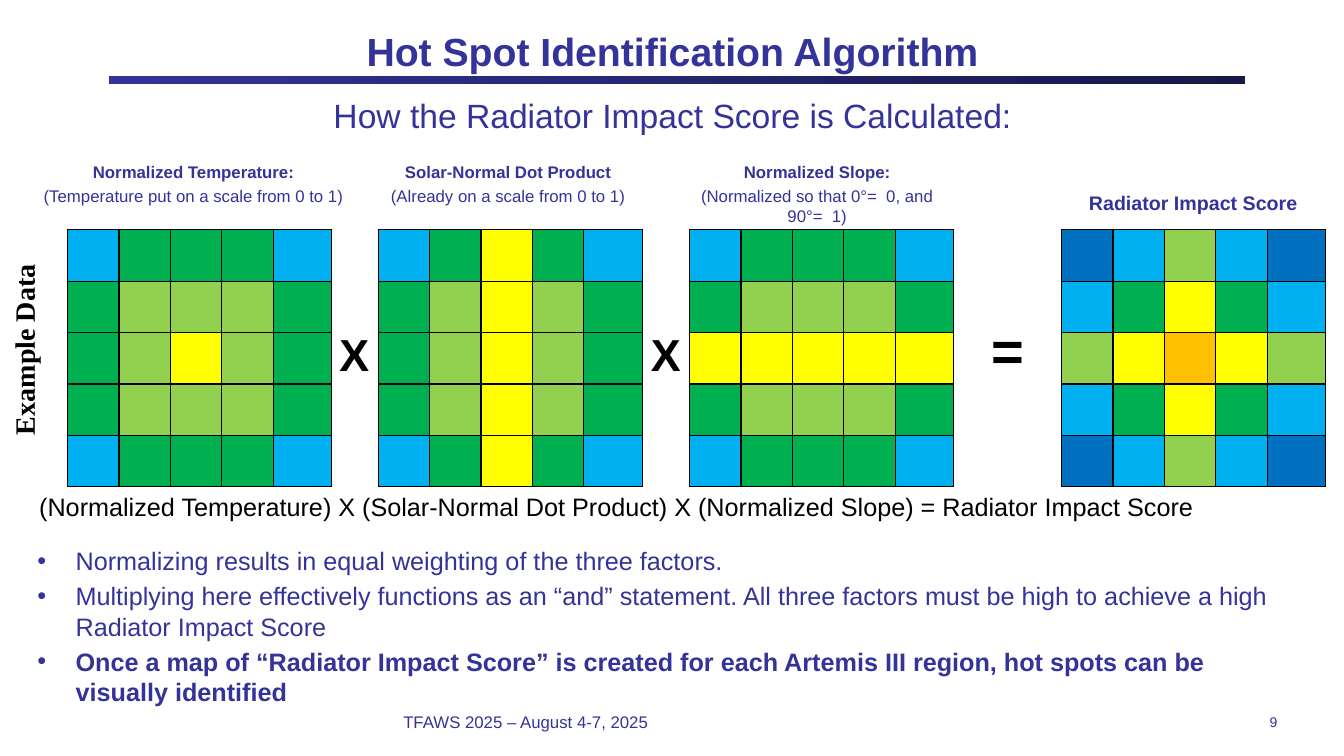
"""Builds the slide that explains how the Radiator Impact Score is calculated."""
from dataclasses import dataclass

from lxml import etree
from pptx import Presentation
from pptx.dml.color import RGBColor
from pptx.enum.shapes import MSO_SHAPE
from pptx.enum.text import MSO_ANCHOR, MSO_AUTO_SIZE, PP_ALIGN
from pptx.oxml.ns import qn
from pptx.util import Emu, Pt

LEFT, CENTER, RIGHT = PP_ALIGN.LEFT, PP_ALIGN.CENTER, PP_ALIGN.RIGHT
TOP, MIDDLE = MSO_ANCHOR.TOP, MSO_ANCHOR.MIDDLE
NO_AUTOFIT = MSO_AUTO_SIZE.NONE
RECTANGLE = MSO_SHAPE.RECTANGLE
EMU_PER_PX = 9144
TWO_CONTENT = 3


@dataclass(frozen=True)
class Theme:
    """Colours, fonts and type sizes of the slide."""
    ink: str = "333399"
    ink_dark: str = "181848"
    black: str = "000000"
    white: str = "FFFFFF"
    sans: str = "Arial"
    serif: str = "Times New Roman"
    title: int = 28
    subtitle: int = 24
    body: int = 18
    score: int = 14
    caption: int = 12
    number: int = 10
    times: int = 32
    equals: int = 40
    side: int = 20


THEME = Theme()
HEAT = {"D": "0070C0", "B": "00B0F0", "G": "00B050",
        "L": "92D050", "Y": "FFFF00", "O": "FFC000"}


def px(length):
    """Turn a length in px into EMU."""
    return Emu(length * EMU_PER_PX)


def write(frame, *texts, size, color=THEME.ink, font=THEME.sans, bold=(False,),
          align=LEFT, anchor=TOP, inset=(10, 5), wrap=True, bullet=None):
    """Write one paragraph per text; bold lists the weight of each paragraph."""
    frame.auto_size = NO_AUTOFIT
    frame.word_wrap = wrap
    frame.vertical_anchor = anchor
    frame.margin_left = frame.margin_right = px(inset[0])
    frame.margin_top = frame.margin_bottom = px(inset[1])
    for index, text in enumerate(texts):
        para = frame.add_paragraph() if index else frame.paragraphs[0]
        properties = para._p.get_or_add_pPr()
        indent = px(38) if bullet else 0
        properties.set("marL", str(indent))
        properties.set("indent", str(-indent))
        if bullet:
            etree.SubElement(properties, qn("a:buChar"), char=bullet)
        else:
            etree.SubElement(properties, qn("a:buNone"))
        para.alignment = align
        para.space_before = Pt(size * 0.2 if index else 0)
        span = para.add_run()
        span.text = text
        span.font.name = font
        span.font.size = Pt(size)
        span.font.bold = bold[index % len(bold)]
        span.font.color.rgb = RGBColor.from_string(color)


class Slide:
    """Holds the theme and the current page and adds elements to it."""

    def __init__(self, page, theme):
        self.page = page
        self.theme = theme

    def placeholder(self, index, area, *texts, **style):
        """Move a template placeholder and fill it."""
        box = self.page.placeholders[index]
        box.left, box.top, box.width, box.height = map(px, area)
        write(box.text_frame, *texts, **style)

    def text(self, area, *texts, vertical=None, **style):
        """Add a text box."""
        box = self.page.shapes.add_textbox(*map(px, area))
        write(box.text_frame, *texts, **style)
        if vertical:
            box.text_frame._txBody.bodyPr.set("vert", vertical)

    def bar(self, area, start, end=None):
        """Add a rectangle with a plain fill or a gradient from left to right."""
        bar = self.page.shapes.add_shape(RECTANGLE, *map(px, area))
        bar.shadow.inherit = False
        bar.line.fill.background()
        if end is None:
            bar.fill.solid()
            bar.fill.fore_color.rgb = RGBColor.from_string(start)
            return
        bar.fill.gradient()
        bar.fill.gradient_angle = 0
        for stop, color in zip(bar.fill.gradient_stops, (start, end)):
            stop.color.rgb = RGBColor.from_string(color)

    def border(self, cell):
        """Draw a thin black line on each side of a cell."""
        properties = cell._tc.get_or_add_tcPr()
        for side in ("a:lnL", "a:lnR", "a:lnT", "a:lnB"):
            line = etree.SubElement(properties, qn(side), w=str(Pt(1)))
            fill = etree.SubElement(line, qn("a:solidFill"))
            etree.SubElement(fill, qn("a:srgbClr"), val=self.theme.black)

    def heat_map(self, left, pattern):
        """Add a table whose cells take their colours from rows of letters."""
        rows = pattern.split()
        frame = self.page.shapes.add_table(
            len(rows), len(rows[0]), px(left), px(228), px(262), px(255))
        table = frame.table
        table.first_row = table.horz_banding = False
        for column, width in zip(table.columns, (51, 51, 51, 51, 58)):
            column.width = px(width)
        for row_index, row in enumerate(rows):
            table.rows[row_index].height = px(51)
            for column_index, letter in enumerate(row):
                cell = table.cell(row_index, column_index)
                self.border(cell)
                cell.fill.solid()
                cell.fill.fore_color.rgb = RGBColor.from_string(HEAT[letter])


def main():
    """Build the deck and save it."""
    deck = Presentation()
    deck.slide_width, deck.slide_height = px(1333), px(750)
    page = deck.slides.add_slide(deck.slide_layouts[TWO_CONTENT])
    slide = Slide(page, THEME)

    slide.bar((98, 75, 1137, 8), THEME.ink, THEME.ink_dark)
    slide.placeholder(0, (67, 21, 1200, 58), "Hot Spot Identification Algorithm",
                      size=THEME.title, bold=(True,), align=CENTER,
                      anchor=MIDDLE, inset=(10, 0))
    slide.placeholder(1, (67, 89, 1200, 58),
                      "How the Radiator Impact Score is Calculated:",
                      size=THEME.subtitle, align=CENTER)

    captions = (
        ((0, 156, 384, 105), "Normalized Temperature:",
         "(Temperature put on a scale from 0 to 1)"),
        ((312, 156, 384, 105), "Solar-Normal Dot Product",
         "(Already on a scale from 0 to 1)"),
        ((675, 156, 271, 92), "Normalized Slope:",
         "(Normalized so that 0°=  0, and 90°=  1)"),
    )
    for area, heading, detail in captions:
        slide.text(area, heading, detail, size=THEME.caption,
                   bold=(True, False), align=CENTER)
    slide.text((1048, 184, 271, 46), "Radiator Impact Score",
               size=THEME.score, bold=(True,), align=CENTER)

    heat_maps = (
        (67, "BGGGB GLLLG GLYLG GLLLG BGGGB"),
        (375, "BGYGB GLYLG GLYLG GLYLG BGYGB"),
        (684, "BGGGB GLLLG YYYYY GLLLG BGGGB"),
        (1053, "DBLBD BGYGB LYOYL BGYGB DBLBD"),
    )
    for left, pattern in heat_maps:
        slide.heat_map(left, pattern)

    operators = (((328, 319, 47, 64), "X", THEME.times),
                 ((637, 319, 47, 64), "X", THEME.times),
                 ((976, 308, 47, 77), "=", THEME.equals))
    for area, sign, size in operators:
        slide.text(area, sign, size=size, color=THEME.black, bold=(True,),
                   align=CENTER, wrap=False)
    slide.text((2, 239, 54, 216), "Example Data", vertical="vert270",
               size=THEME.side, color=THEME.black, font=THEME.serif,
               bold=(True,), align=CENTER, wrap=False)

    slide.text((29, 483, 1191, 43),
               "(Normalized Temperature) X (Solar-Normal Dot Product) X "
               "(Normalized Slope) = Radiator Impact Score",
               size=THEME.body, color=THEME.black)
    slide.placeholder(
        2, (27, 536, 1267, 197),
        "Normalizing results in equal weighting of the three factors.",
        "Multiplying here effectively functions as an “and” statement. "
        "All three factors must be high to achieve a high Radiator Impact Score",
        "Once a map of “Radiator Impact Score” is created for each "
        "Artemis III region, hot spots can be visually identified",
        size=THEME.body, bold=(False, False, True), bullet="•")

    slide.text((400, 700, 533, 33), "TFAWS 2025 – August 4-7, 2025",
               size=THEME.caption, anchor=MIDDLE, inset=(0, 0))
    slide.text((989, 700, 278, 33), "9", size=THEME.number,
               align=RIGHT, anchor=MIDDLE, inset=(0, 0))
    slide.bar((0, 0, 108, 100), THEME.white)
    deck.save("out.pptx")


if __name__ == "__main__":
    main()
